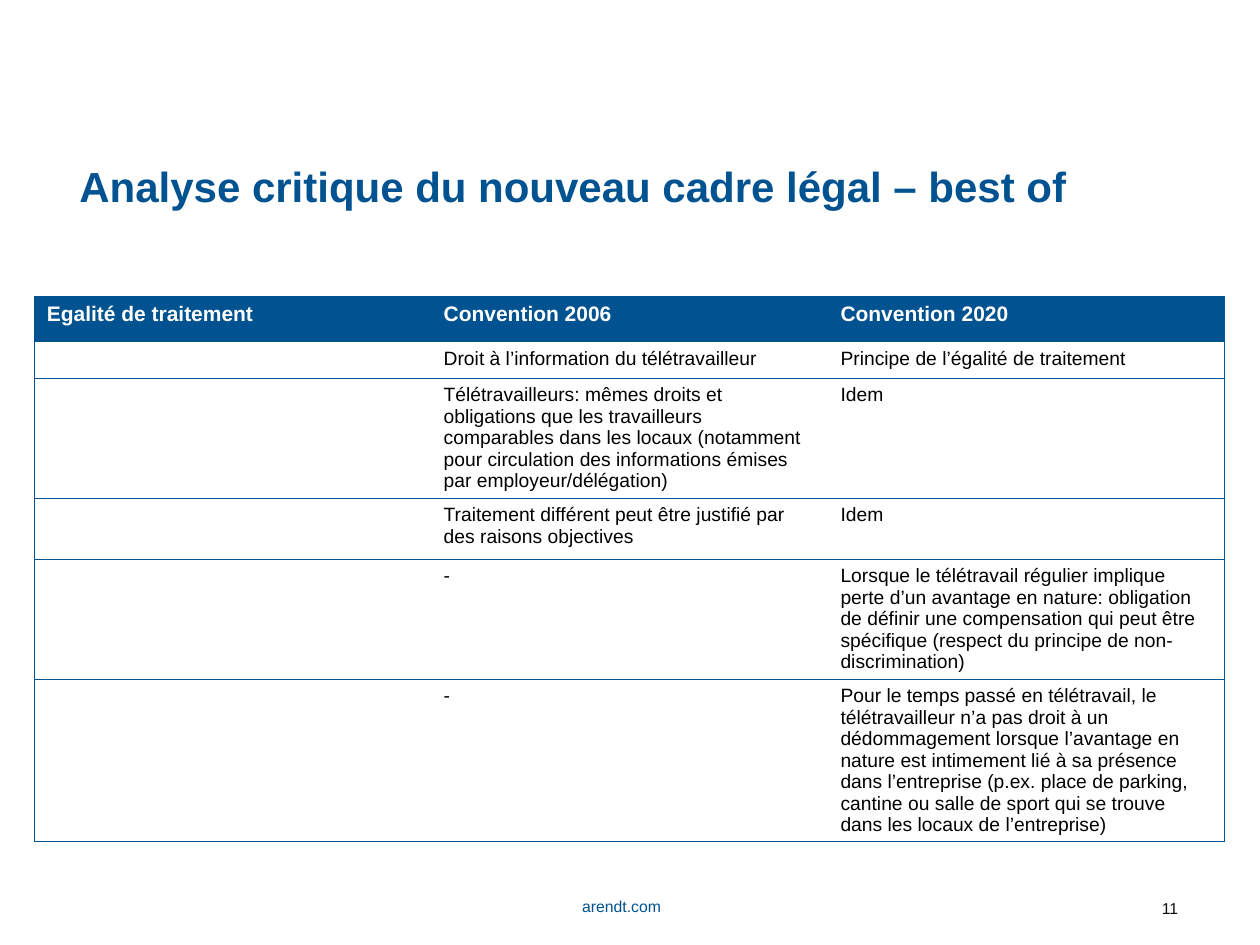
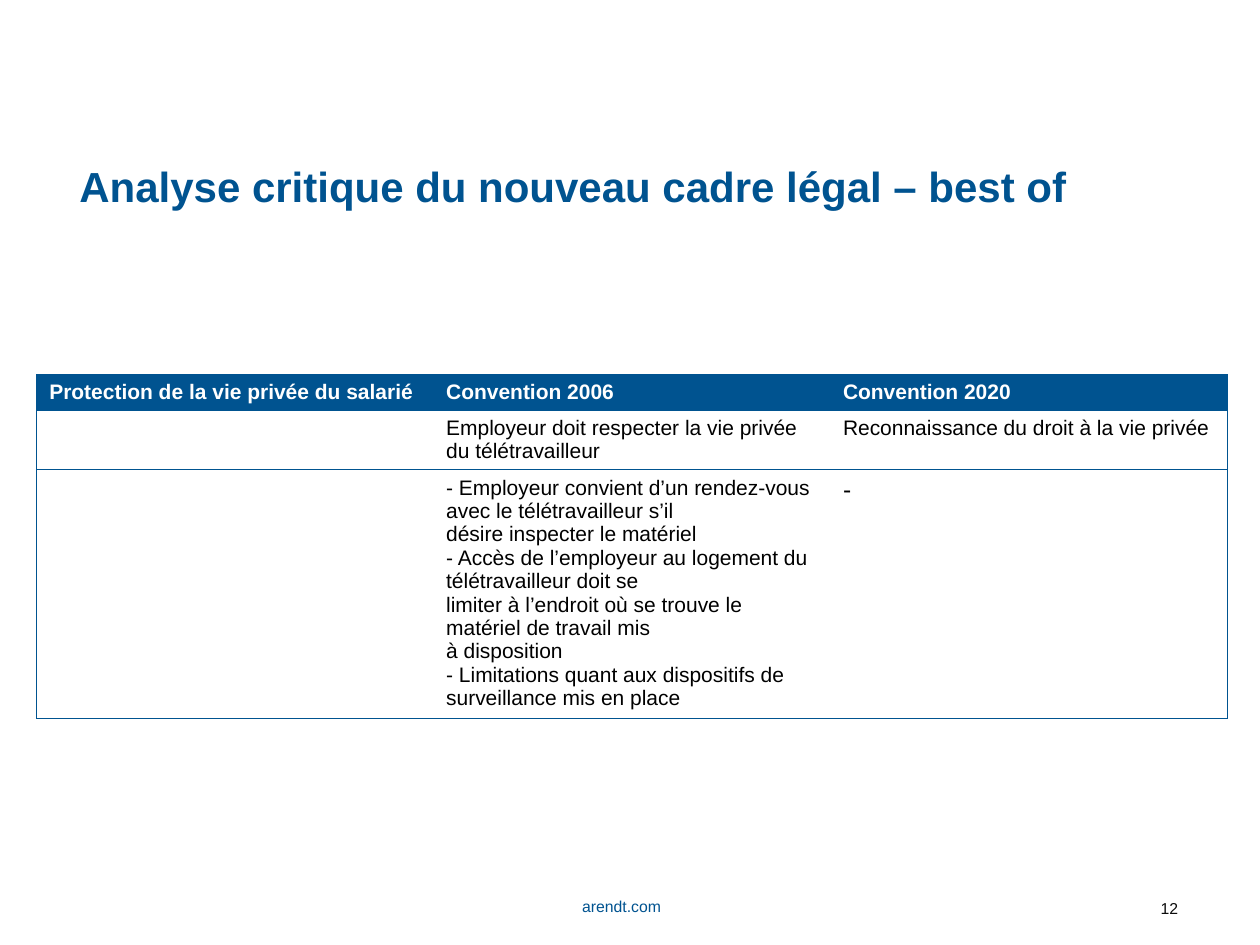
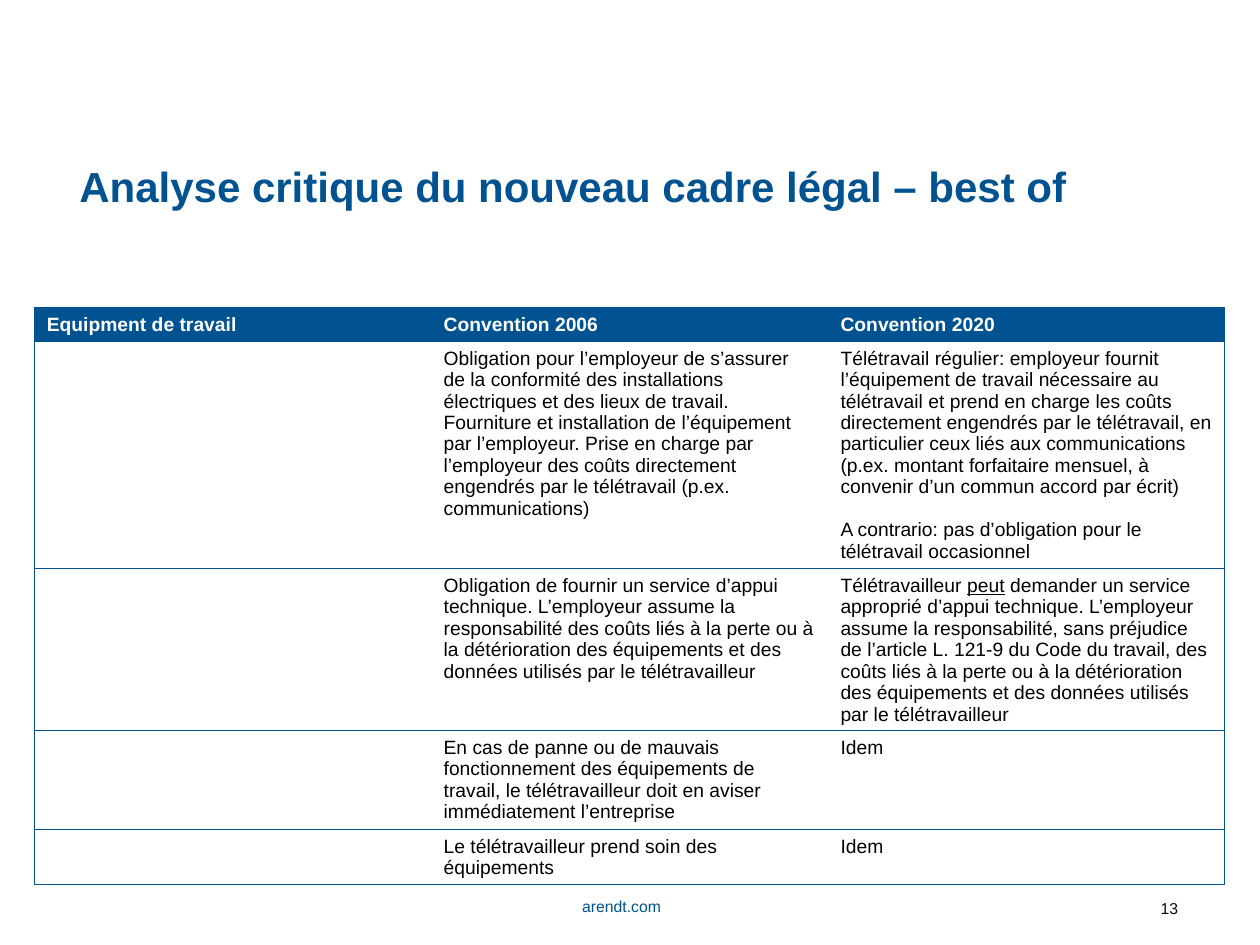
from dataclasses import dataclass

from lxml.etree import SubElement
from pptx import Presentation
from pptx.dml.color import RGBColor
from pptx.enum.text import MSO_ANCHOR, PP_ALIGN
from pptx.oxml.ns import qn
from pptx.util import Cm, Pt


@dataclass(frozen=True)
class Theme:
    font: str = "Arial"
    blue: str = "005390"
    white: str = "FFFFFF"
    black: str = "000000"
    number_colour: str = "0C0C0C"
    title_size: int = 24
    footer_size: int = 9
    large_size: int = 12
    small_size: int = 11
    dash_size: int = 14
    line_factor: float = 1.115
    border_width: float = 0.5
    cell_bottom: float = 0.05
    plain_table_style: str = "{2D5ABB26-0587-4C30-8999-92F81FD0307C}"


THEME = Theme()
TITLE = "Analyse critique du nouveau cadre légal – best of"
COLUMN_HEADINGS = ("Convention 2006", "Convention 2020")
COLUMN_WIDTH = 8


@dataclass(frozen=True)
class Comparison:
    number: int
    topic: str
    left: float
    top: float
    heading_size: int
    body_size: int
    row_heights: tuple
    rows: tuple
    dash_size: int = 0
    paragraph_gap: float = 0


EQUALITY = Comparison(
    number=11,
    topic="Egalité de traitement",
    left=0.69,
    top=5.97,
    heading_size=THEME.large_size,
    body_size=THEME.small_size,
    row_heights=(0.91, 0.74, 2.42, 1.23, 2.42, 3.28),
    rows=(
        ("Droit à l’information du télétravailleur",
         "Principe de l’égalité de traitement"),
        ("Télétravailleurs: mêmes droits et obligations que les travailleurs "
         "comparables dans les locaux (notamment pour circulation des "
         "informations émises par employeur/délégation)",
         "Idem"),
        ("Traitement différent peut être justifié par des raisons objectives",
         "Idem"),
        ("-",
         "Lorsque le télétravail régulier implique perte d’un avantage en "
         "nature: obligation de définir une compensation qui peut être "
         "spécifique (respect du principe de non-discrimination)"),
        ("-",
         "Pour le temps passé en télétravail, le télétravailleur n’a pas droit "
         "à un dédommagement lorsque l’avantage en nature est intimement lié à "
         "sa présence dans l’entreprise (p.ex. place de parking, cantine ou "
         "salle de sport qui se trouve dans les locaux de l’entreprise)"),
    ),
)

PRIVACY = Comparison(
    number=12,
    topic="Protection de la vie privée du salarié",
    left=0.74,
    top=7.55,
    heading_size=THEME.large_size,
    body_size=THEME.large_size,
    row_heights=(0.72, 1.2, 5.02),
    dash_size=THEME.dash_size,
    rows=(
        ("Employeur doit respecter la vie privée du télétravailleur",
         "Reconnaissance du droit à la vie privée"),
        ("- Employeur convient d’un rendez-vous avec le télétravailleur s’il\n"
         "désire inspecter le matériel\n"
         "- Accès de l’employeur au logement du télétravailleur doit se\n"
         "limiter à l’endroit où se trouve le matériel de travail mis\n"
         "à disposition\n"
         "- Limitations quant aux dispositifs de surveillance mis en place",
         "-"),
    ),
)

EQUIPMENT = Comparison(
    number=13,
    topic="Equipment de travail",
    left=0.69,
    top=6.2,
    heading_size=THEME.small_size,
    body_size=THEME.small_size,
    row_heights=(0.68, 4.58, 3.27, 1.99, 1.11),
    paragraph_gap=12.3,
    rows=(
        ("Obligation pour l’employeur de s’assurer de la conformité des "
         "installations électriques et des lieux de travail. Fourniture et "
         "installation de l’équipement par l’employeur. Prise en charge par "
         "l’employeur des coûts directement engendrés par le télétravail "
         "(p.ex. communications)",
         "Télétravail régulier: employeur fournit l’équipement de travail "
         "nécessaire au télétravail et prend en charge les coûts directement "
         "engendrés par le télétravail, en particulier ceux liés aux "
         "communications (p.ex. montant forfaitaire mensuel, à convenir d’un "
         "commun accord par écrit)\n"
         "A contrario: pas d’obligation pour le télétravail occasionnel"),
        ("Obligation de fournir un service d’appui technique. L’employeur "
         "assume la responsabilité des coûts liés à la perte ou à la "
         "détérioration des équipements et des données utilisés par le "
         "télétravailleur",
         "Télétravailleur _peut_ demander un service approprié d’appui "
         "technique. L’employeur assume la responsabilité, sans préjudice de "
         "l’article L. 121-9 du Code du travail, des coûts liés à la perte ou "
         "à la détérioration des équipements et des données utilisés par le "
         "télétravailleur"),
        ("En cas de panne ou de mauvais fonctionnement des équipements de "
         "travail, le télétravailleur doit en aviser immédiatement "
         "l’entreprise",
         "Idem"),
        ("Le télétravailleur prend soin des équipements", "Idem"),
    ),
)


def add_span(para, text, size, colour, bold=False, underline=False):
    span = para.add_run()
    span.text = text
    span.font.name = THEME.font
    span.font.size = Pt(size)
    span.font.bold = bold
    span.font.color.rgb = RGBColor.from_string(colour)
    if underline:
        span.font.underline = True


def add_text(page, area, text, size, colour, bold=False,
             align=PP_ALIGN.LEFT, anchor=MSO_ANCHOR.MIDDLE):
    box = page.shapes.add_textbox(*(Cm(length) for length in area))
    frame = box.text_frame
    frame.word_wrap = True
    frame.vertical_anchor = anchor
    para = frame.paragraphs[0]
    para.alignment = align
    add_span(para, text, size, colour, bold)
    return para


def add_title(page):
    para = add_text(page, (1.35, 2.77, 22.65, 2.08), TITLE,
                    THEME.title_size, THEME.blue, bold=True)
    para.line_spacing = 0.9


def add_footer(page, number):
    add_text(page, (10.41, 17.83, 4.24, 0.86), "arendt.com",
             THEME.footer_size, THEME.blue, align=PP_ALIGN.CENTER)
    add_text(page, (22.81, 18, 1.19, 0.74), str(number),
             THEME.footer_size, THEME.number_colour,
             align=PP_ALIGN.RIGHT, anchor=MSO_ANCHOR.TOP)


def draw_borders(cell, sides):
    properties = cell._tc.get_or_add_tcPr()
    for side in sides:
        line = SubElement(properties, qn(f"a:ln{side}"),
                          w=str(Pt(THEME.border_width)))
        fill = SubElement(line, qn("a:solidFill"))
        SubElement(fill, qn("a:srgbClr"), val=THEME.blue)


def fill_cell(cell, text, size, heading, gap):
    colour = THEME.white if heading else THEME.black
    background = THEME.blue if heading else THEME.white
    cell.fill.solid()
    cell.fill.fore_color.rgb = RGBColor.from_string(background)
    cell.margin_bottom = Cm(THEME.cell_bottom)
    frame = cell.text_frame
    if not text:
        SubElement(frame.paragraphs[0]._p, qn("a:endParaRPr"),
                   sz=str(size * 100))
        return
    for index, content in enumerate(text.split("\n")):
        para = frame.add_paragraph() if index else frame.paragraphs[0]
        para.line_spacing = Pt(size * THEME.line_factor)
        if index and gap:
            para.space_before = Pt(gap)
        for part, words in enumerate(content.split("_")):
            add_span(para, words, size, colour, heading, part % 2 == 1)


def add_comparison_table(page, comparison):
    rows = [(comparison.topic, *COLUMN_HEADINGS)]
    rows += [("", *row) for row in comparison.rows]
    columns = len(rows[0])
    table = page.shapes.add_table(
        len(rows), columns, Cm(comparison.left), Cm(comparison.top),
        Cm(columns * COLUMN_WIDTH), Cm(sum(comparison.row_heights))).table
    table._tbl.tblPr.find(qn("a:tableStyleId")).text = THEME.plain_table_style
    table.horz_banding = False
    for column in table.columns:
        column.width = Cm(COLUMN_WIDTH)
    for row, height in zip(table.rows, comparison.row_heights):
        row.height = Cm(height)
    for row_index, row in enumerate(rows):
        heading = row_index == 0
        for column_index, text in enumerate(row):
            cell = table.cell(row_index, column_index)
            left = "L" if column_index == 0 else ""
            right = "R" if column_index == columns - 1 else ""
            draw_borders(cell, left + right + "TB")
            size = comparison.heading_size if heading else comparison.body_size
            if text == "-" and comparison.dash_size:
                size = comparison.dash_size
            fill_cell(cell, text, size, heading, comparison.paragraph_gap)


def main():
    deck = Presentation()
    deck.slide_width = Cm(25.4)
    deck.slide_height = Cm(19.05)
    for comparison in (EQUALITY, PRIVACY, EQUIPMENT):
        page = deck.slides.add_slide(deck.slide_layouts[6])
        add_footer(page, comparison.number)
        add_title(page)
        add_comparison_table(page, comparison)
    deck.save("out.pptx")


if __name__ == "__main__":
    main()
